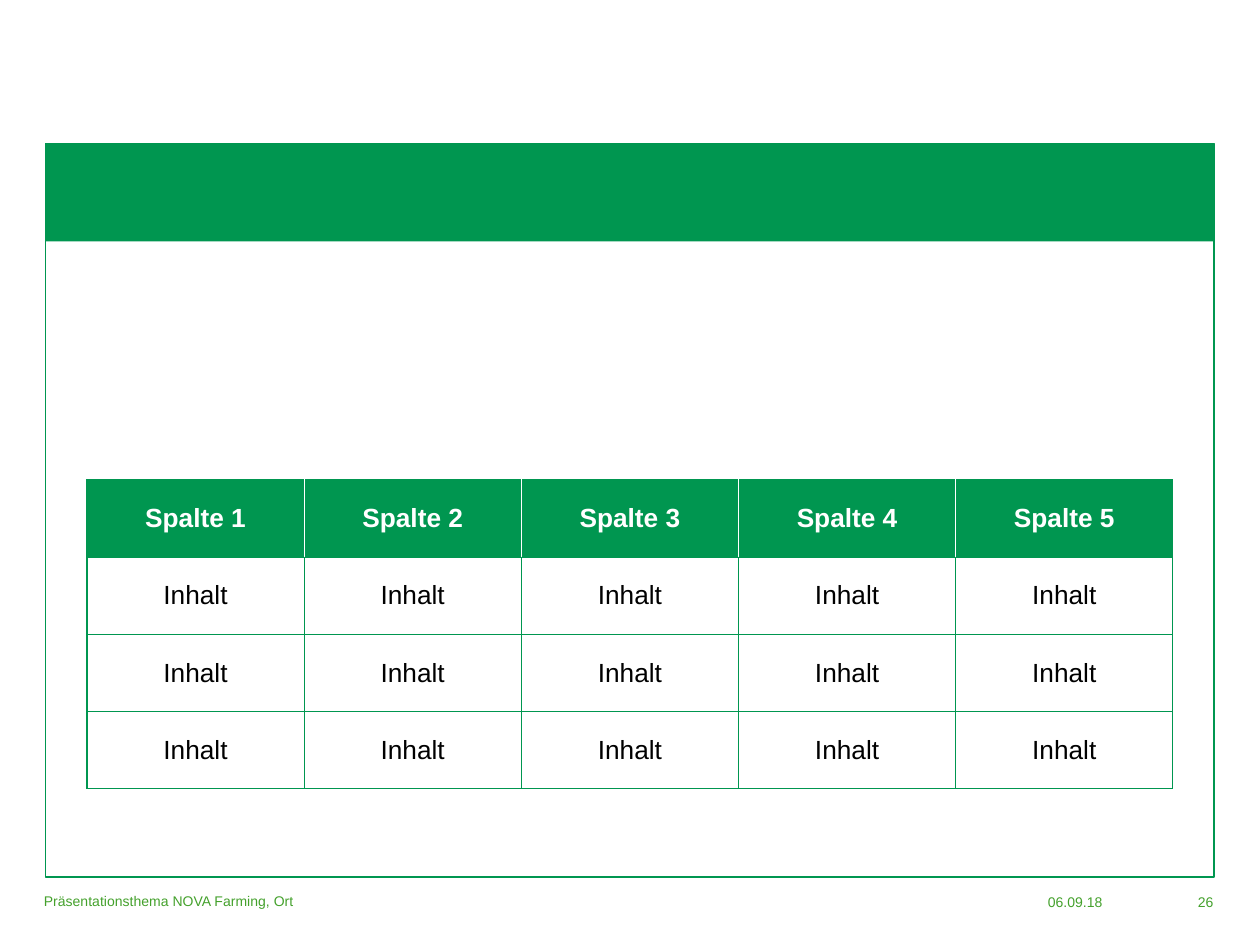
import dataclasses

import pptx
import pptx.dml.color
import pptx.enum.shapes
import pptx.enum.text
import pptx.oxml
import pptx.oxml.ns
import pptx.util

Pt = pptx.util.Pt
Align = pptx.enum.text.PP_ALIGN
Anchor = pptx.enum.text.MSO_ANCHOR


@dataclasses.dataclass(frozen=True)
class Theme:
    font: str = "Arial"
    green: str = "009650"
    footer_green: str = "44A12C"
    white: str = "FFFFFF"
    black: str = "000000"
    footer_size: float = 8
    table_size: float = 15
    frame_width: float = 1
    border_width: float = 0.75


class SlideBuilder:
    """Draws styled elements on the current slide, with lengths in points."""

    def __init__(self, slide, theme):
        self.slide = slide
        self.theme = theme

    def color(self, value):
        return pptx.dml.color.RGBColor.from_string(value)

    def style(self, para, size, color, align, bold=False):
        para.alignment = align
        para.font.name = self.theme.font
        para.font.size = Pt(size)
        para.font.bold = bold
        para.font.color.rgb = self.color(color)

    def rectangle(self, left, top, width, height, fill, line=None):
        shape = self.slide.shapes.add_shape(
            pptx.enum.shapes.MSO_SHAPE.RECTANGLE, Pt(left), Pt(top), Pt(width), Pt(height))
        shape.shadow.inherit = False
        shape.fill.solid()
        shape.fill.fore_color.rgb = self.color(fill)
        if line:
            shape.line.color.rgb = self.color(line)
            shape.line.width = Pt(self.theme.frame_width)
        else:
            shape.line.fill.background()

    def footer(self, text, left, top, width, height,
               align=Align.RIGHT, anchor=Anchor.TOP, insets=(0, 0)):
        box = self.slide.shapes.add_textbox(Pt(left), Pt(top), Pt(width), Pt(height))
        frame = box.text_frame
        frame.word_wrap = True
        frame.vertical_anchor = anchor
        frame.margin_left = frame.margin_right = Pt(insets[0])
        frame.margin_top = frame.margin_bottom = Pt(insets[1])
        para = frame.paragraphs[0]
        para.text = text
        self.style(para, self.theme.footer_size, self.theme.footer_green, align)

    def borders(self, cell, colors):
        properties = cell._tc.get_or_add_tcPr()
        for index, (side, color) in enumerate(colors.items()):
            properties.insert(index, pptx.oxml.parse_xml(
                f'<a:ln{side} {pptx.oxml.ns.nsdecls("a")} w="{Pt(self.theme.border_width)}">'
                f'<a:solidFill><a:srgbClr val="{color}"/></a:solidFill></a:ln{side}>'))

    def cell(self, cell, text, header, colors):
        theme = self.theme
        cell.vertical_anchor = Anchor.MIDDLE
        cell.margin_left = cell.margin_right = Pt(3)
        cell.margin_top = cell.margin_bottom = Pt(3)
        if header:
            cell.fill.solid()
            cell.fill.fore_color.rgb = self.color(theme.green)
        else:
            cell.fill.background()
        para = cell.text_frame.paragraphs[0]
        para.text = text
        self.style(para, theme.table_size, theme.white if header else theme.black,
                   Align.CENTER, header)
        self.borders(cell, colors)

    def table(self, rows, left, top, width, height):
        theme = self.theme
        last = len(rows[0]) - 1
        table = self.slide.shapes.add_table(
            len(rows), len(rows[0]), Pt(left), Pt(top), Pt(width), Pt(height)).table
        table.horz_banding = False
        for column in table.columns:
            column.width = Pt(width / len(rows[0]))
        for row_index, row in enumerate(rows):
            header = row_index == 0
            table.rows[row_index].height = Pt(height / len(rows))
            for column_index, text in enumerate(row):
                divider = theme.white if header else theme.green
                colors = {
                    "L": divider if column_index > 0 else theme.green,
                    "R": divider if column_index < last else theme.green,
                    "T": theme.green,
                    "B": theme.green,
                }
                self.cell(table.cell(row_index, column_index), text, header, colors)


def main():
    theme = Theme()
    deck = pptx.Presentation()
    deck.slide_width, deck.slide_height = Pt(720), Pt(540)
    builder = SlideBuilder(deck.slides.add_slide(deck.slide_layouts[6]), theme)

    builder.footer("06.09.18", 573.8, 510.5, 56.2, 9.4)
    builder.footer("26", 628.6, 510.5, 64.8, 9.4)
    builder.rectangle(26, 82, 667.6, 419, theme.white, theme.green)
    builder.rectangle(26, 82, 668, 56, theme.green)
    builder.footer("Präsentationsthema NOVA Farming, Ort", 18, 500.4, 455.8, 28.8,
                   Align.LEFT, Anchor.MIDDLE, (7.2, 3.6))

    headings = [f"Spalte {number}" for number in range(1, 6)]
    contents = [["Inhalt"] * len(headings) for _ in range(3)]
    builder.table([headings] + contents, 49.7, 274.3, 620.6, 176.4)

    deck.save("out.pptx")


if __name__ == "__main__":
    main()
